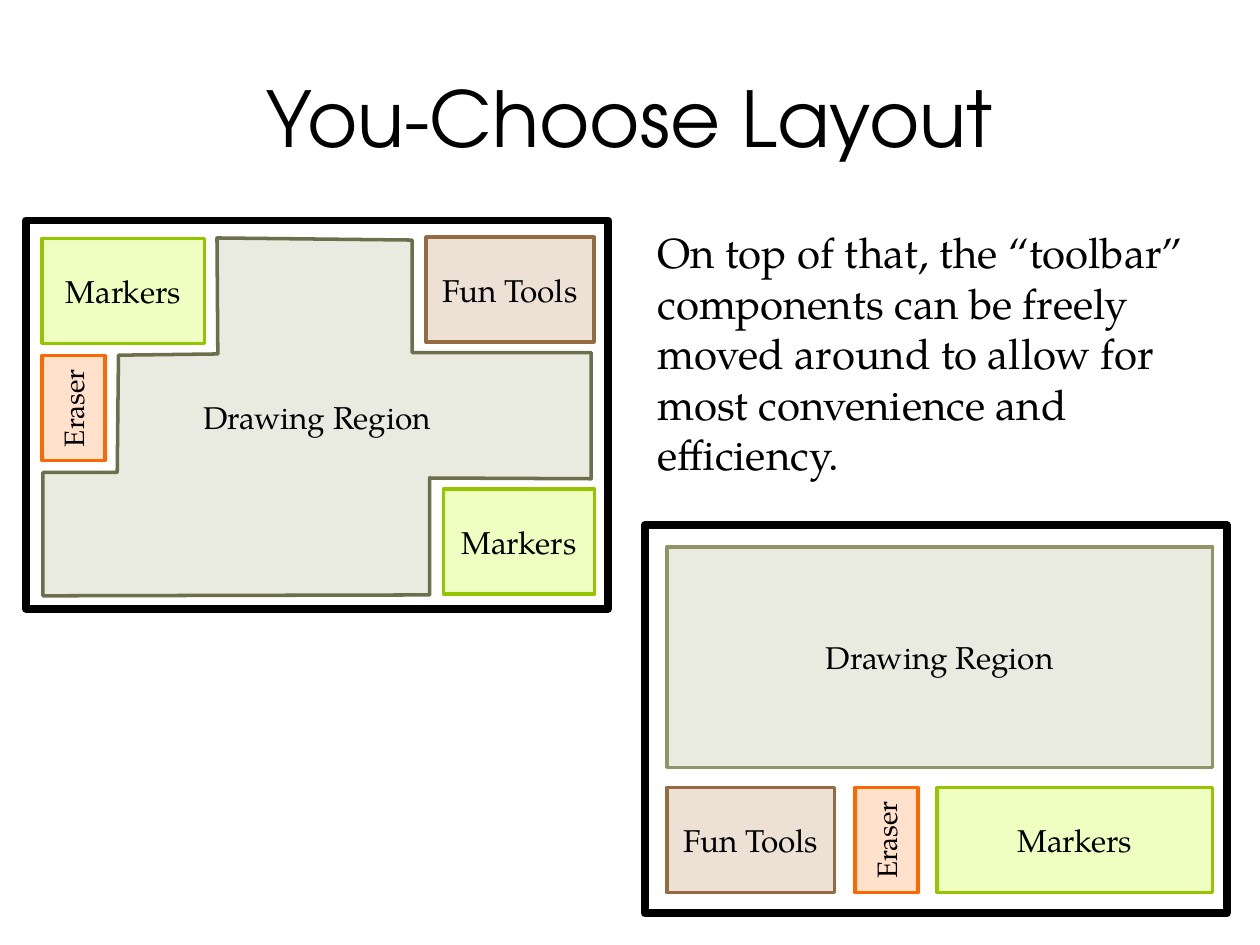
"""Build the You-Choose Layout slide with two sample screen layouts."""
from lxml import etree
from pptx import Presentation
from pptx import util as u
from pptx.dml import color
from pptx.enum import shapes, text
from pptx.oxml import ns

TITLE_FONT = "TeX Gyre Adventor"
BODY_FONT = "TeX Gyre Pagella"
BLACK = "000000"
TOOL_HEIGHT = 60
ERASER_WIDTH = 36
FUN_TOOLS_WIDTH = 96
FRAME_WIDTH, FRAME_HEIGHT = 332.5, 222
MARKERS = ("Markers", "EFFFC1", "94C600")
FUN_TOOLS = ("Fun Tools", "EDE1D6", "956B43")
ERASER = ("Eraser", "FFE1CC", "FF6700")
WIDE_REGION = ("Drawing Region", "E9EAE0", "909465")
CUT_REGION = ("Drawing Region", "E9EAE0", "6C6F4C")
CUT_REGION_CORNERS = [
    (124, 136), (235.5, 137.2), (235.5, 201.5), (337.8, 201.5),
    (337.8, 273.6), (245.5, 273.2), (245.5, 340), (24.5, 340.5),
    (24.5, 270), (67, 270), (67.7, 203), (124.5, 202.3),
]


def rgb(value):
    """Return the colour for a hex string."""
    return color.RGBColor.from_string(value)


def style_paragraph(paragraph, font_name, size, alignment):
    """Set the font and alignment of a paragraph."""
    paragraph.alignment = alignment
    paragraph.font.name = font_name
    paragraph.font.size = u.Pt(size)
    paragraph.font.color.rgb = rgb(BLACK)


def style_outline(shape, line, width):
    """Give a shape a plain outline without a shadow."""
    shape.shadow.inherit = False
    shape.line.color.rgb = rgb(line)
    shape.line.width = u.Pt(width)


def style_component(shape, component, size=18):
    """Fill, outline and label a screen component."""
    label, fill, line = component
    style_outline(shape, line, 2)
    shape.fill.solid()
    shape.fill.fore_color.rgb = rgb(fill)
    frame = shape.text_frame
    frame.text = label
    frame.vertical_anchor = text.MSO_ANCHOR.MIDDLE
    style_paragraph(frame.paragraphs[0], BODY_FONT, size, text.PP_ALIGN.CENTER)


def add_rectangle(slide, left, top, width, height):
    """Add a rectangle measured in points."""
    return slide.shapes.add_shape(
        shapes.MSO_SHAPE.RECTANGLE, u.Pt(left), u.Pt(top), u.Pt(width), u.Pt(height))


def add_frame(slide, left, top):
    """Add the thick border of a screen."""
    shape = add_rectangle(slide, left, top, FRAME_WIDTH, FRAME_HEIGHT)
    shape.fill.background()
    style_outline(shape, BLACK, 4.5)


def add_component(slide, component, left, top, width, height=TOOL_HEIGHT):
    """Add a labelled rectangular component."""
    style_component(add_rectangle(slide, left, top, width, height), component)


def add_eraser(slide, left, top):
    """Add the upright eraser, turned so that its label reads upwards."""
    shift = (TOOL_HEIGHT - ERASER_WIDTH) / 2
    shape = add_rectangle(slide, left - shift, top + shift, TOOL_HEIGHT, ERASER_WIDTH)
    shape.rotation = 270
    style_component(shape, ERASER, 16)


def add_cut_region(slide):
    """Add the drawing region that leaves room for the tools around it."""
    corners = [(u.Pt(x), u.Pt(y)) for x, y in CUT_REGION_CORNERS]
    builder = slide.shapes.build_freeform(*corners[0])
    builder.add_line_segments(corners[1:], close=True)
    style_component(builder.convert_to_shape(), CUT_REGION)


def fill_placeholder(shape, content, box, font_name, size, alignment):
    """Place a placeholder and write one paragraph into it."""
    shape.left, shape.top, shape.width, shape.height = map(u.Pt, box)
    shape.text_frame.text = content
    paragraph = shape.text_frame.paragraphs[0]
    paragraph.space_before = u.Pt(0)
    style_paragraph(paragraph, font_name, size, alignment)
    return paragraph


def remove_bullet(paragraph):
    """Take the bullet and its indent from a paragraph."""
    properties = paragraph._p.get_or_add_pPr()
    properties.set("marL", "0")
    properties.set("indent", "0")
    etree.SubElement(properties, ns.qn("a:buNone"))


def add_wide_layout(slide):
    """Add the screen with its tools in a row at the bottom."""
    add_frame(slide, 368.5, 300)
    add_component(slide, WIDE_REGION, 381, 312.5, 312, 126)
    add_component(slide, FUN_TOOLS, 381, 450, FUN_TOOLS_WIDTH)
    add_eraser(slide, 488.6, 450)
    add_component(slide, MARKERS, 535.4, 450, 157.6)


def add_scattered_layout(slide):
    """Add the screen with its tools around the drawing region."""
    add_frame(slide, 15, 126)
    add_component(slide, MARKERS, 253.4, 279.4, 86.4)
    add_eraser(slide, 24, 203.2)
    add_component(slide, FUN_TOOLS, 243.4, 135.4, FUN_TOOLS_WIDTH)
    add_component(slide, MARKERS, 24, 136.2, 93)
    add_cut_region(slide)


def main():
    """Build and save the slide."""
    presentation = Presentation()
    presentation.slide_width, presentation.slide_height = u.Pt(720), u.Pt(540)
    slide = presentation.slides.add_slide(presentation.slide_layouts[1])
    title, body = slide.placeholders
    fill_placeholder(title, "You-Choose Layout", (36, 21.6, 648, 90),
                     TITLE_FONT, 44, text.PP_ALIGN.CENTER)
    paragraph = fill_placeholder(
        body,
        "On top of that, the “toolbar” components can be freely moved around "
        "to allow for most convenience and efficiency.",
        (368.5, 126, FRAME_WIDTH, 153), BODY_FONT, 24, text.PP_ALIGN.LEFT)
    remove_bullet(paragraph)
    add_wide_layout(slide)
    add_scattered_layout(slide)
    presentation.save("out.pptx")


if __name__ == "__main__":
    main()
